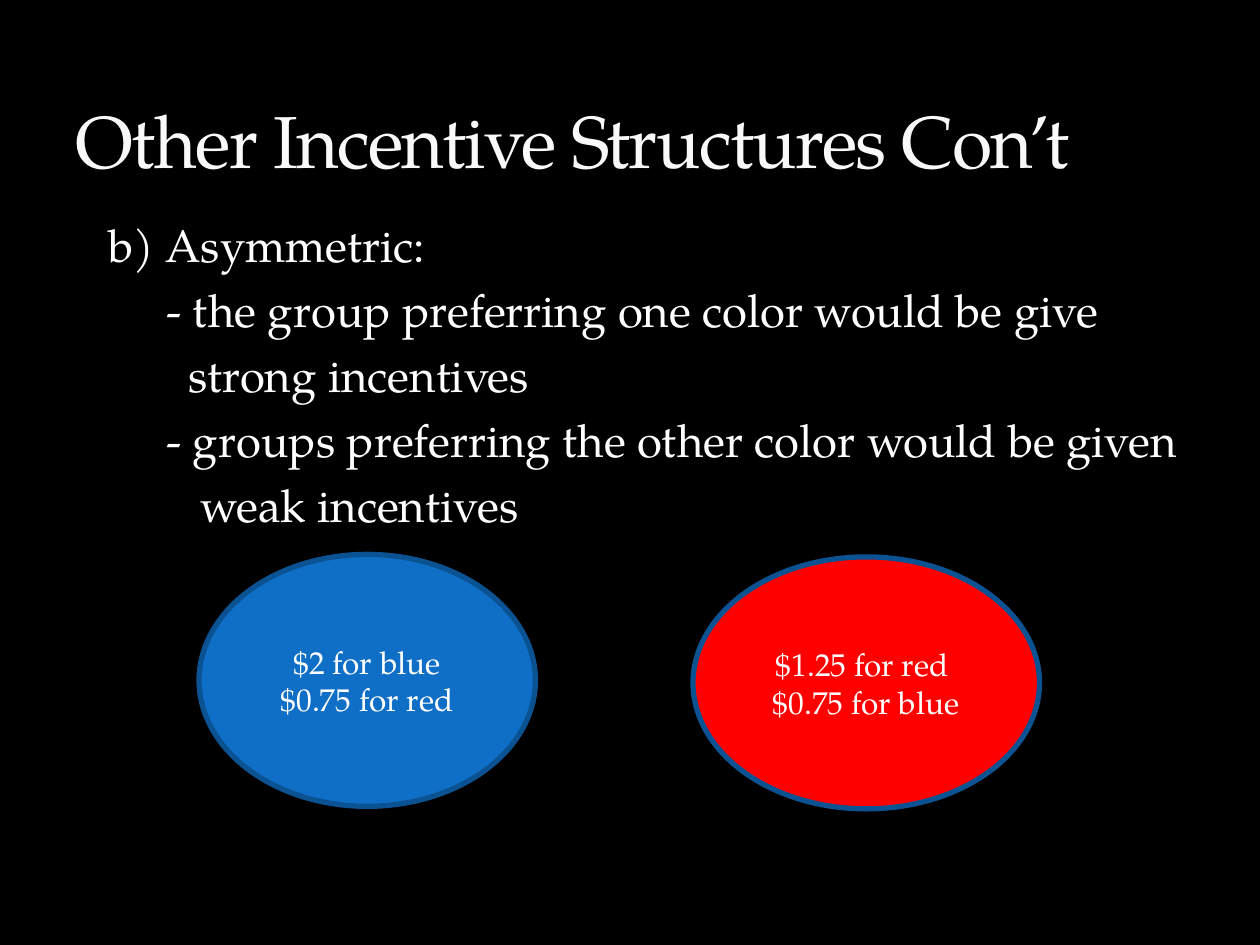
from pptx import Presentation
from pptx.dml.color import RGBColor
from pptx.enum.shapes import MSO_SHAPE
from pptx.enum.text import MSO_ANCHOR, PP_ALIGN
from pptx.util import Inches, Pt

OVAL = MSO_SHAPE.OVAL
TOP, MIDDLE, BOTTOM = MSO_ANCHOR.TOP, MSO_ANCHOR.MIDDLE, MSO_ANCHOR.BOTTOM
LEFT, CENTER = PP_ALIGN.LEFT, PP_ALIGN.CENTER

FONT = "TeX Gyre Pagella"
BLACK, WHITE, OFF_WHITE = "000000", "FFFFFF", "F9F9F9"
BLUE, RED, OUTLINE = "0F6FC6", "FF0000", "0B5292"

# Each line of the body with its left indent in inches
BODY_LINES = [
    ("b) Asymmetric:", 0.26),
    ("- the group preferring one color would be give", 0.72),
    ("strong incentives", 0.9),
    ("- groups preferring the other color would be given", 0.72),
    ("weak incentives", 0.99),
]

INCENTIVE_GROUPS = [
    ((1.58, 4.4, 2.67, 2), BLUE, ["$2 for blue", "$0.75 for red"]),
    ((5.5, 4.42, 2.75, 2), RED, ["$1.25 for red ", "$0.75 for blue"]),
]


def color(hex_string):
    return RGBColor.from_string(hex_string)


def write_text(shape, lines, size, text_color=WHITE, align=LEFT, anchor=TOP,
               space_before=0, tracking=0, indents=None):
    """Fill a shape with one paragraph per line; tracking is in points."""
    frame = shape.text_frame
    frame.word_wrap = True
    frame.vertical_anchor = anchor
    for index, line in enumerate(lines):
        paragraph = frame.paragraphs[0] if index == 0 else frame.add_paragraph()
        paragraph.alignment = align
        paragraph.space_before = Pt(space_before)
        if indents:
            properties = paragraph._p.get_or_add_pPr()
            properties.set("marL", str(Inches(indents[index])))
            properties.set("indent", "0")
        run = paragraph.add_run()
        run.text = line
        run.font.name = FONT
        run.font.size = Pt(size)
        run.font.color.rgb = color(text_color)
        if tracking:
            run._r.get_or_add_rPr().set("spc", str(int(tracking * 100)))


def add_title(slide, box, text):
    shape = slide.shapes.add_textbox(*map(Inches, box))
    write_text(shape, [text], 42, text_color=OFF_WHITE, anchor=BOTTOM, tracking=-1)


def add_body(slide, box, lines):
    shape = slide.shapes.add_textbox(*map(Inches, box))
    texts, indents = zip(*lines)
    write_text(shape, texts, 26, space_before=6, indents=indents)


def add_incentive_oval(slide, box, fill, lines):
    shape = slide.shapes.add_shape(OVAL, *map(Inches, box))
    shape.shadow.inherit = False
    shape.fill.solid()
    shape.fill.fore_color.rgb = color(fill)
    shape.line.color.rgb = color(OUTLINE)
    shape.line.width = Pt(3)
    write_text(shape, lines, 18, align=CENTER, anchor=MIDDLE)


def main():
    presentation = Presentation()
    presentation.slide_width = Inches(10)
    presentation.slide_height = Inches(7.5)
    slide = presentation.slides.add_slide(presentation.slide_layouts[6])
    slide.background.fill.solid()
    slide.background.fill.fore_color.rgb = color(BLACK)

    add_body(slide, (0.5, 1.67, 9, 5), BODY_LINES)
    add_title(slide, (0.5, 0.17, 9, 1.33), "Other Incentive Structures Con’t")
    for box, fill, lines in INCENTIVE_GROUPS:
        add_incentive_oval(slide, box, fill, lines)

    presentation.save("out.pptx")


if __name__ == "__main__":
    main()
